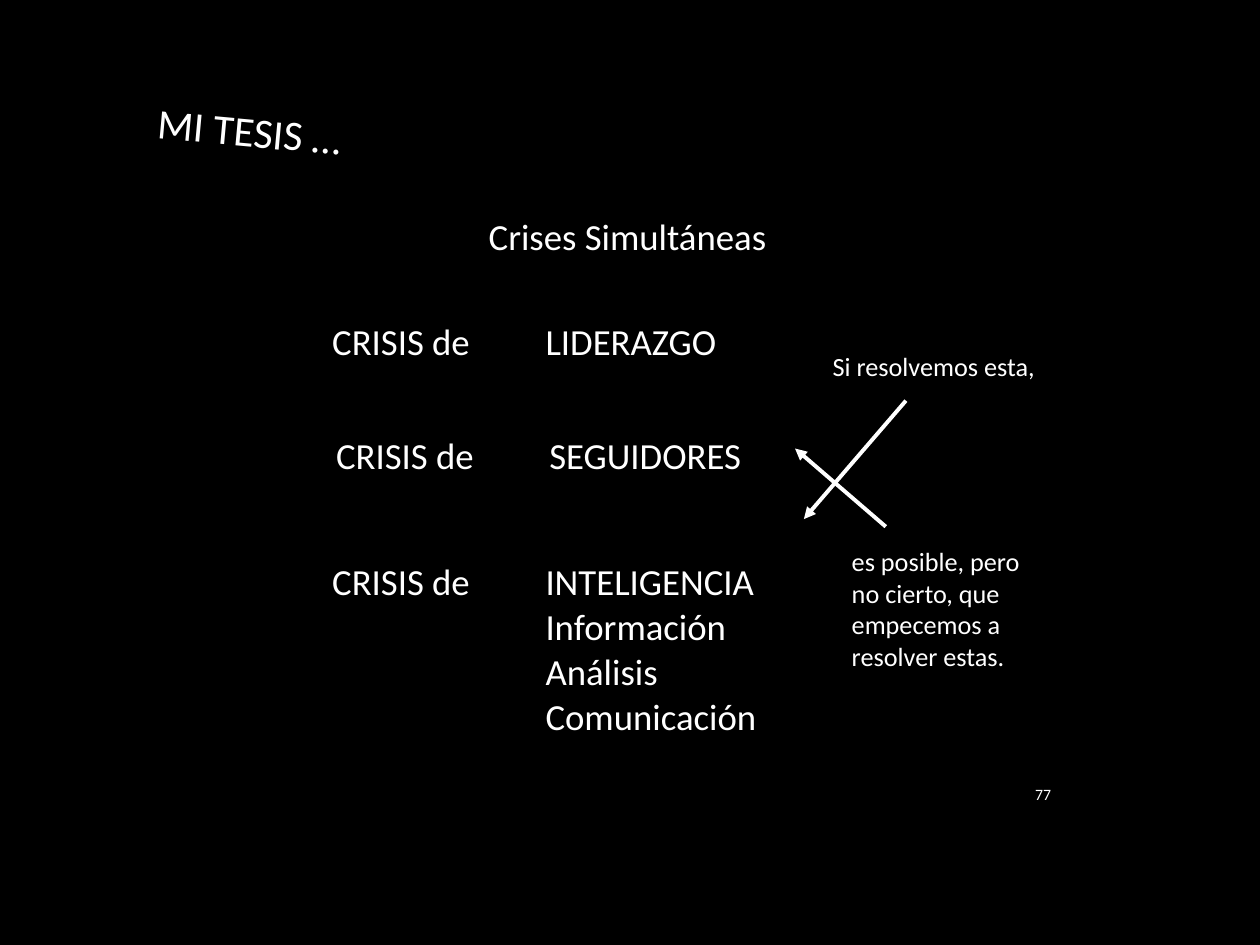
from lxml import etree
from pptx import Presentation
from pptx import util as u
from pptx.dml.color import RGBColor
from pptx.enum import shapes, text
from pptx.oxml.ns import qn

HUES = {"back": "000000", "ink": "FFFFFF"}
FONT = "Calibri"
WIDE, HIGH = 10, 7.5
LEFT = 2.06
PAD = 0.3
PLAIN = "{2D5ABB26-0587-4C30-8999-92F81FD0307C}"  # table style without grid
SIDES = ("left", "top", "right", "bottom")

# top, height, column widths, topics
CRISES = [
    (2.24, 0.95, (1.97, 3), ["LIDERAZGO"]),
    (3.15, 0.95, (2, 2.44), ["SEGUIDORES"]),
    (4.15, 2, (1.97, 3),
     ["INTELIGENCIA", "Información", "Análisis", "Comunicación"]),
]
ARROWS = [((7.19, 3.18), (6.38, 4.12)), ((7.03, 4.18), (6.31, 3.56))]


def hue(name):
    return RGBColor.from_string(HUES[name])


def inch(*nums):
    return [u.Inches(n) for n in nums]


def write(frame, lines, size, align=text.PP_ALIGN.LEFT):
    frame.text = "\n".join(lines)
    for para in frame.paragraphs:
        para.alignment = align
        look = {"name": FONT, "size": u.Pt(size), "bold": False}
        for key, val in look.items():
            setattr(para.font, key, val)
        para.font.color.rgb = hue("ink")


def inset(item, pads):
    for side, pad in zip(SIDES, pads):
        setattr(item, f"margin_{side}", u.Inches(pad))


def label(slide, box, line, size, wrap=False, **form):
    """Add a text box; form holds align and anchor where they differ."""
    shape = slide.shapes.add_textbox(*inch(*box))
    frame = shape.text_frame
    frame.word_wrap = wrap
    frame.vertical_anchor = form.get("anchor", text.MSO_ANCHOR.TOP)
    write(frame, [line], size, form.get("align", text.PP_ALIGN.LEFT))
    return shape


def head(slide, line):
    title = slide.shapes.title
    place = zip(("left", "top", "width", "height"), inch(1.15, 0.79, 1.83, 0.5))
    for key, val in place:
        setattr(title, key, val)
    title.rotation = 5.2
    frame = title.text_frame
    frame.word_wrap = False
    frame.auto_size = text.MSO_AUTO_SIZE.NONE
    frame.vertical_anchor = text.MSO_ANCHOR.TOP
    write(frame, [line], 24)


def crisis(slide, top, high, cols, topics):
    box = inch(LEFT, top, sum(cols), high)
    table = slide.shapes.add_table(1, len(cols), *box).table
    table.first_row = table.horz_banding = False
    next(table._tbl.iter(qn("a:tableStyleId"))).text = PLAIN
    sides = [(["CRISIS de"], text.PP_ALIGN.RIGHT), (topics, text.PP_ALIGN.LEFT)]
    for col, (wide, (lines, align)) in enumerate(zip(cols, sides)):
        table.columns[col].width = u.Inches(wide)
        cell = table.cell(0, col)
        cell.fill.background()
        inset(cell, [PAD] * 4)
        write(cell.text_frame, lines, 21, align)


def arrow(slide, start, end):
    line = slide.shapes.add_connector(
        shapes.MSO_CONNECTOR.STRAIGHT, *inch(*start, *end))
    line.line.color.rgb = hue("ink")
    line.line.width = u.Pt(2.25)
    props = line._element.spPr
    etree.SubElement(props.find(qn("a:ln")), qn("a:tailEnd"), type="triangle")
    etree.SubElement(props, qn("a:effectLst"))


def note(slide, box, line):
    shape = slide.shapes.add_shape(shapes.MSO_SHAPE.RECTANGLE, *inch(*box))
    shape.shadow.inherit = False
    shape.fill.solid()
    shape.fill.fore_color.rgb = hue("back")
    shape.line.fill.background()
    frame = shape.text_frame
    frame.word_wrap = True
    frame.vertical_anchor = text.MSO_ANCHOR.TOP
    inset(frame, (0.07, 0.04, 0.1, 0.05))
    write(frame, [line], 15)


def main():
    deck = Presentation()
    deck.slide_width, deck.slide_height = inch(WIDE, HIGH)
    slide = deck.slides.add_slide(deck.slide_layouts[5])
    slide.background.fill.solid()
    slide.background.fill.fore_color.rgb = hue("back")

    head(slide, "MI TESIS …")
    label(slide, (3.78, 1.65, 2.49, 0.45), "Crises Simultáneas", 21)
    for row in CRISES:
        crisis(slide, *row)
    label(slide, (6.51, 2.73, 1.87, 0.35), "Si resolvemos esta,", 15)
    note(slide, (6.69, 4.29, 1.74, 1.1),
         "es posible, pero no cierto, que empecemos a resolver estas.")
    for start, end in ARROWS:
        arrow(slide, start, end)
    label(slide, (6.75, 6.15, 1.69, 0.3), "77", 9, wrap=True,
          align=text.PP_ALIGN.RIGHT, anchor=text.MSO_ANCHOR.MIDDLE)
    deck.save("out.pptx")


if __name__ == "__main__":
    main()
